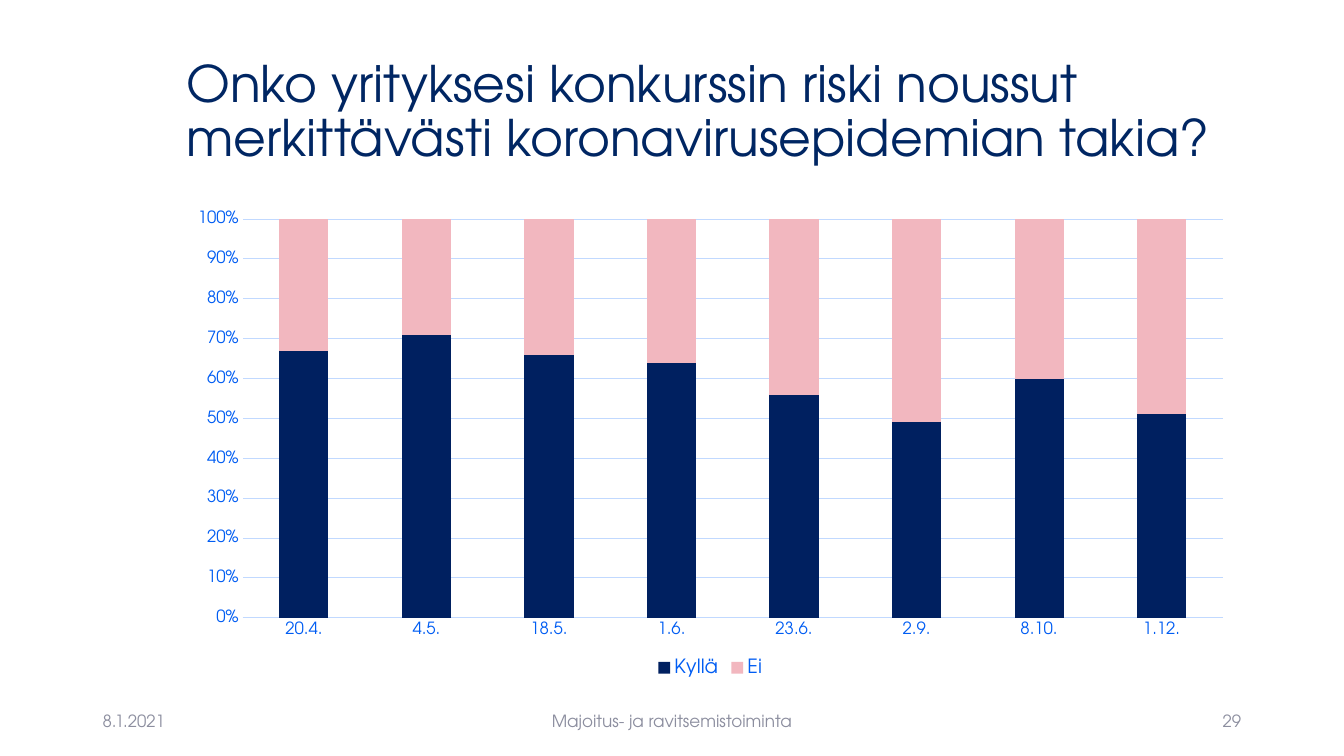
from dataclasses import dataclass

from pptx import Presentation
from pptx.chart.data import CategoryChartData
from pptx.dml.color import RGBColor
from pptx.enum.chart import XL_CHART_TYPE, XL_LEGEND_POSITION, XL_TICK_MARK
from pptx.enum.text import MSO_ANCHOR, PP_ALIGN
from pptx.util import Inches, Pt

# Content
TITLE = "Onko yrityksesi konkurssin riski noussut merkittävästi koronavirusepidemian takia?"
DATES = ["20.4.", "4.5.", "18.5.", "1.6.", "23.6.", "2.9.", "8.10.", "1.12."]
ANSWERS = {
    "Kyllä": [67, 71, 66, 64, 56, 49, 60, 51],
    "Ei": [33, 29, 34, 36, 44, 51, 40, 49],
}
# Footer text, width in inches, alignment
FOOTER = [
    ("8.1.2021", 3, PP_ALIGN.LEFT),
    ("Majoitus- ja ravitsemistoiminta", 4.5, PP_ALIGN.CENTER),
    ("29", 3, PP_ALIGN.RIGHT),
]


@dataclass(frozen=True)
class Theme:
    font: str = "TeX Gyre Adventor"
    title: str = "002663"
    label: str = "005DF3"
    grid: str = "C1D9FF"
    footer: str = "8C8E9F"
    series: tuple = ("002060", "F2B7BF")
    title_size: int = 36
    legend_size: int = 14
    small_size: int = 12
    chart_size: int = 10


THEME = Theme()

# Layout in inches
WIDTH, HEIGHT = 13.33, 7.5
MARGIN = 0.92
BODY_LEFT, BODY_WIDTH = 1.75, 10.59
TITLE_TOP, TITLE_HEIGHT = 0.4, 1.45
CHART_TOP, CHART_HEIGHT = 2, 4.76
FOOTER_TOP, FOOTER_HEIGHT = 6.95, 0.4


def style_font(font, size, color):
    font.name = THEME.font
    font.size = Pt(size)
    font.bold = False
    font.color.rgb = RGBColor.from_string(color)


def style_line(line, color):
    line.color.rgb = RGBColor.from_string(color)
    line.width = Pt(0.75)


def add_text(s, text, box, size, color, align=PP_ALIGN.LEFT, spacing=1.0):
    tf = s.shapes.add_textbox(*map(Inches, box)).text_frame
    tf.word_wrap = True
    tf.vertical_anchor = MSO_ANCHOR.MIDDLE
    p = tf.paragraphs[0]
    p.text = text
    p.alignment = align
    p.line_spacing = spacing
    style_font(p.runs[0].font, size, color)


def add_answer_chart(s):
    data = CategoryChartData()
    data.categories = DATES
    for name, values in ANSWERS.items():
        data.add_series(name, values)
    box = (BODY_LEFT, CHART_TOP, BODY_WIDTH, CHART_HEIGHT)
    chart = s.shapes.add_chart(
        XL_CHART_TYPE.COLUMN_STACKED_100, *map(Inches, box), data).chart
    chart.has_title = False
    style_font(chart.font, THEME.chart_size, THEME.title)

    # Columns
    plot = chart.plots[0]
    plot.gap_width, plot.overlap = 150, 100
    plot.vary_by_categories = False
    for series, color in zip(plot.series, THEME.series):
        series.format.fill.solid()
        series.format.fill.fore_color.rgb = RGBColor.from_string(color)

    # Axes
    cat, val = chart.category_axis, chart.value_axis
    for axis in (cat, val):
        axis.major_tick_mark = axis.minor_tick_mark = XL_TICK_MARK.NONE
        style_font(axis.tick_labels.font, THEME.small_size, THEME.label)
    style_line(cat.format.line, THEME.grid)
    val.format.line.fill.background()
    val.has_major_gridlines = True
    style_line(val.major_gridlines.format.line, THEME.grid)
    val.minimum_scale, val.maximum_scale, val.major_unit = 0, 1, 0.1
    val.tick_labels.number_format = "0%"
    val.tick_labels.number_format_is_linked = False

    # Legend
    chart.has_legend = True
    chart.legend.position = XL_LEGEND_POSITION.BOTTOM
    chart.legend.include_in_layout = False
    style_font(chart.legend.font, THEME.legend_size, THEME.label)


def add_footer(s):
    left = MARGIN
    free = WIDTH - 2 * MARGIN - sum(width for _, width, _ in FOOTER)
    gap = free / (len(FOOTER) - 1)
    for text, width, align in FOOTER:
        add_text(s, text, (left, FOOTER_TOP, width, FOOTER_HEIGHT),
                 THEME.small_size, THEME.footer, align)
        left += width + gap


def main():
    prs = Presentation()
    prs.slide_width, prs.slide_height = Inches(WIDTH), Inches(HEIGHT)
    s = prs.slides.add_slide(prs.slide_layouts[6])
    add_text(s, TITLE, (BODY_LEFT, TITLE_TOP, BODY_WIDTH, TITLE_HEIGHT),
             THEME.title_size, THEME.title, spacing=0.9)
    add_footer(s)
    add_answer_chart(s)
    prs.save("out.pptx")


if __name__ == "__main__":
    main()
